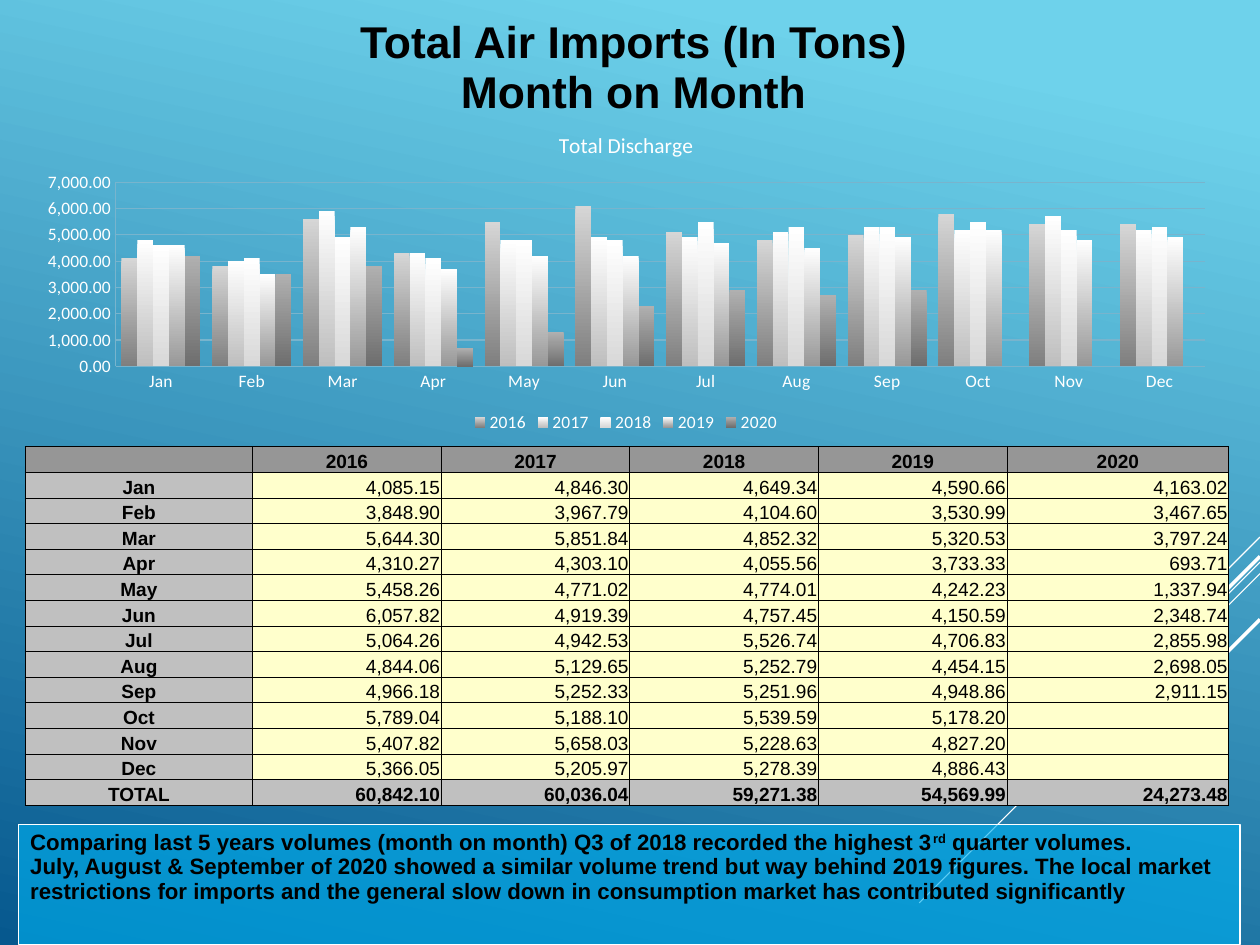
from lxml.etree import SubElement
from pptx import Presentation
from pptx.chart.data import CategoryChartData as ChartData
from pptx.dml.color import RGBColor as RGB
from pptx.enum.chart import XL_CHART_TYPE as Kind, XL_LEGEND_POSITION as Place, XL_TICK_MARK as Tick
from pptx.enum.shapes import MSO_CONNECTOR as Link, MSO_SHAPE as Shape
from pptx.enum.text import MSO_ANCHOR as Anchor, MSO_AUTO_SIZE as Fit, PP_ALIGN as Align
from pptx.oxml.ns import qn
from pptx.util import Cm, Inches, Pt

WIDE, HIGH = Cm(28), Cm(21)
BLACK, WHITE = RGB(0, 0, 0), RGB(255, 255, 255)
SKY, NAVY = RGB(0x6E, 0xD2, 0xEB), RGB(0x06, 0x58, 0x8E)
AZURE, MIST = RGB(0x00, 0xB0, 0xF0), RGB(0x78, 0xB4, 0xCD)
DARK, GREY, CREAM = RGB(0x96, 0x96, 0x96), RGB(0xC0, 0xC0, 0xC0), RGB(0xFF, 0xFF, 0xCC)

YEARS = ["2016", "2017", "2018", "2019", "2020"]
TONS = [
    ("Jan", 4085.15, 4846.30, 4649.34, 4590.66, 4163.02),
    ("Feb", 3848.90, 3967.79, 4104.60, 3530.99, 3467.65),
    ("Mar", 5644.30, 5851.84, 4852.32, 5320.53, 3797.24),
    ("Apr", 4310.27, 4303.10, 4055.56, 3733.33, 693.71),
    ("May", 5458.26, 4771.02, 4774.01, 4242.23, 1337.94),
    ("Jun", 6057.82, 4919.39, 4757.45, 4150.59, 2348.74),
    ("Jul", 5064.26, 4942.53, 5526.74, 4706.83, 2855.98),
    ("Aug", 4844.06, 5129.65, 5252.79, 4454.15, 2698.05),
    ("Sep", 4966.18, 5252.33, 5251.96, 4948.86, 2911.15),
    ("Oct", 5789.04, 5188.10, 5539.59, 5178.20, None),
    ("Nov", 5407.82, 5658.03, 5228.63, 4827.20, None),
    ("Dec", 5366.05, 5205.97, 5278.39, 4886.43, None),
]
TOTAL = ("TOTAL", 60842.10, 60036.04, 59271.38, 54569.99, 24273.48)
# Top and bottom shade of each year's columns
SHADES = [(0xD6, 0x7F), (0xFF, 0xBE), (0xFF, 0xD8), (0xFF, 0x98), (0xB0, 0x6E)]


def span(x, y, w, h):
    """Turn percentages of the slide into lengths."""
    return [int(part * side / 100) for part, side in zip((x, y, w, h), (WIDE, HIGH) * 2)]


def style(par, size, bold=True, align=Align.LEFT):
    par.alignment, par.line_spacing = align, 0.93
    for run in par.runs:
        font = run.font
        font.name, font.size, font.bold = "Arial", Pt(size), bold
        font.color.rgb = BLACK


deck = Presentation()
deck.slide_width, deck.slide_height = WIDE, HIGH
slide = deck.slides.add_slide(deck.slide_layouts[5])
shapes = slide.shapes

# Background
back = slide.background.fill
back.gradient()
back.gradient_angle = 258
for stop, color, spot in zip(back.gradient_stops, (SKY, NAVY), (0.1, 1)):
    stop.color.rgb, stop.position = color, spot

# Diagonal rays from the right edge: start, run, weight
for top, run, weight in [(56.83, 8.26, 0.75), (59.49, 27.04, 0.75), (60.7, 17.15, 0.75),
                         (58.89, 15.7, 2.25), (65.54, 11.43, 2.25)]:
    y, reach = int(HIGH * top / 100), int(WIDE * run / 100)
    ray = shapes.add_connector(Link.STRAIGHT, WIDE, y, WIDE - reach, y + reach)
    ray.line.color.rgb, ray.line.width = WHITE, Pt(weight)
    SubElement(ray._element.spPr, qn("a:effectLst"))

# Title
title = shapes.title
title.left, title.top, title.width, title.height = span(5.26, 3.02, 90.02, 8.1)
frame = title.text_frame
frame.text = "Total Air Imports (In Tons)\nMonth on Month"
frame.auto_size, frame.vertical_anchor = Fit.NONE, Anchor.MIDDLE
frame.margin_left = frame.margin_right = frame.margin_bottom = 0
frame.margin_top = Inches(0.03)
for par in frame.paragraphs:
    style(par, 28, align=Align.CENTER)

# Comment box
note = shapes.add_shape(Shape.RECTANGLE, *span(1.5, 87.25, 96.91, 12.7))
note.shadow.inherit = False
note.fill.solid()
note.fill.fore_color.rgb = AZURE
tint = note._element.spPr.find(qn("a:solidFill"))[0]
SubElement(tint, qn("a:alpha"), val="63000")
note.line.color.rgb, note.line.width = WHITE, Pt(0.75)
frame = note.text_frame
frame.word_wrap, frame.vertical_anchor = True, Anchor.TOP
first, second = frame.paragraphs[0], frame.add_paragraph()
for text in ("Comparing last 5 years volumes (month on month) Q3 of 2018 recorded the highest 3",
             "rd", " quarter volumes."):
    first.add_run().text = text
first.runs[1]._r.get_or_add_rPr().set("baseline", "30000")
second.text = ("July, August & September of 2020 showed a similar volume trend but way behind 2019 "
               "figures. The local market restrictions for imports and the general slow down in "
               "consumption market has contributed significantly")
for par in frame.paragraphs:
    style(par, 14)

# Column chart, in whole hundreds of tons
data = ChartData(number_format="#,##0.00")
data.categories = [row[0] for row in TONS]
for col, year in enumerate(YEARS, 1):
    data.add_series(year, [row[col] and int(round(row[col], -2)) for row in TONS])
chart = shapes.add_chart(Kind.COLUMN_CLUSTERED, *span(1.81, 12.09, 95.74, 34.22), data).chart
chart.font.name, chart.font.size = "Calibri", Pt(11)
chart.font.color.rgb = WHITE
chart.has_title = True
chart.chart_title.text_frame.text = "Total Discharge"
font = chart.chart_title.text_frame.paragraphs[0].runs[0].font
font.name, font.size, font.bold = "Calibri", Pt(13.5), False
font.color.rgb = WHITE
chart.has_legend = True
chart.legend.position, chart.legend.include_in_layout = Place.BOTTOM, False

plot = chart.plots[0]
plot.gap_width, plot.overlap, plot.vary_by_categories = 75, 0, False
for series, pair in zip(plot.series, SHADES):
    fill = series.format.fill
    fill.gradient()
    fill.gradient_angle = 270
    for stop, tone in zip(fill.gradient_stops, pair):
        stop.color.rgb = RGB(tone, tone, tone)

values = chart.value_axis
values.minimum_scale, values.maximum_scale, values.major_unit = 0, 7000, 1000
values.tick_labels.number_format = "#,##0.00"
values.tick_labels.number_format_is_linked = False
for axis in (values, chart.category_axis):
    axis.major_tick_mark = axis.minor_tick_mark = Tick.NONE
for part in (values, chart.category_axis, values.major_gridlines):
    part.format.line.color.rgb, part.format.line.width = MIST, Pt(0.75)

# Plot area as shares of the chart
area = chart._chartSpace.chart.plotArea
for old in area.findall(qn("c:layout")):
    area.remove(old)
layout = SubElement(area, qn("c:layout"))
area.insert(0, layout)
manual = SubElement(layout, qn("c:manualLayout"))
left = 1 / 13
for tag, val in [("layoutTarget", "inner"), ("xMode", "edge"), ("yMode", "edge"),
                 ("x", left), ("y", 0.21), ("w", 0.98 - left), ("h", 0.57)]:
    SubElement(manual, qn("c:" + tag), val=str(val))

# Table of tons
rows = [("", *YEARS), *TONS, TOTAL]
last = len(rows) - 1
grid = shapes.add_table(len(rows), 6, *span(2, 47.28, 95.46, 37.97)).table
grid.first_row = grid.horz_banding = False
for column, width in zip(grid.columns, [1.99, 1.65, 1.65, 1.65, 1.65, 1.94]):
    column.width = Inches(width)
for r, row in enumerate(rows):
    for c, value in enumerate(row):
        cell = grid.cell(r, c)
        props = cell._tc.get_or_add_tcPr()
        for side in ("lnL", "lnR", "lnT", "lnB"):
            edge = SubElement(props, qn("a:" + side), w="6350")
            SubElement(SubElement(edge, qn("a:solidFill")), qn("a:srgbClr"), val=str(BLACK))
        cell.fill.solid()
        cell.fill.fore_color.rgb = DARK if r == 0 else GREY if c == 0 or r == last else CREAM
        cell.margin_left = cell.margin_right = cell.margin_top = Inches(0.01)
        cell.margin_bottom, cell.vertical_anchor = 0, Anchor.BOTTOM
        par = cell.text_frame.paragraphs[0]
        if value:
            par.text = value if isinstance(value, str) else f"{value:,.2f}"
        else:
            SubElement(par._p, qn("a:endParaRPr"), sz="1200")
        head = r == 0 or c == 0
        style(par, 12, head or r == last, Align.CENTER if head else Align.RIGHT)

deck.save("out.pptx")
